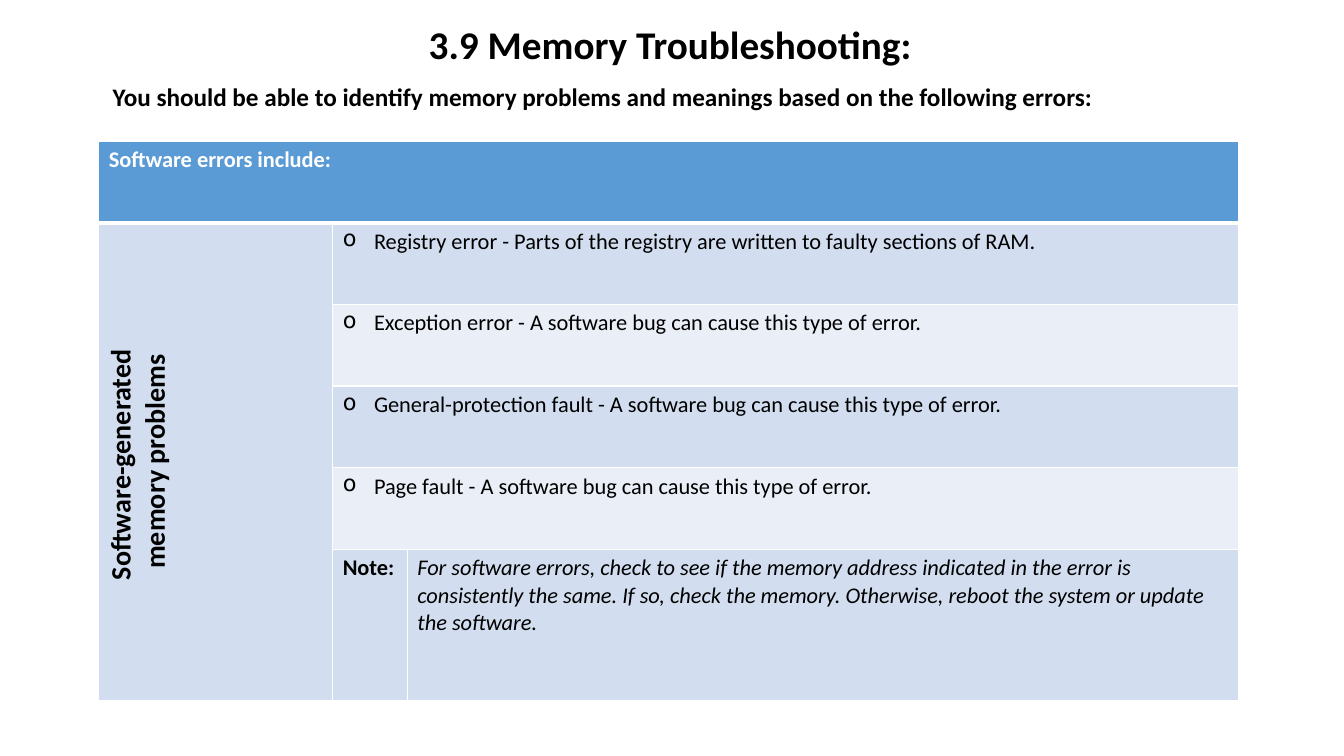
from lxml import etree
from pptx import Presentation
from pptx.dml.color import RGBColor
from pptx.enum.text import MSO_ANCHOR, PP_ALIGN
from pptx.oxml.ns import qn
from pptx.util import Inches, Pt

CENTER = PP_ALIGN.CENTER
MIDDLE = MSO_ANCHOR.MIDDLE

FONT = "Calibri"
BLACK, WHITE = "000000", "FFFFFF"
HEADER_FILL, DARK_BAND, LIGHT_BAND = "5B9BD5", "D2DEEF", "EAEFF7"

TITLE = "3.9 Memory Troubleshooting:"
INTRO = "You should be able to identify memory problems and meanings based on the following errors:"
HEADING = "Software errors include:"
CATEGORY = ["Software-generated ", "memory problems"]
ERRORS = [
    "Registry error - Parts of the registry are written to faulty sections of RAM.",
    "Exception error - A software bug can cause this type of error.",
    "General-protection fault - A software bug can cause this type of error.",
    "Page fault - A software bug can cause this type of error.",
]
NOTE_LABEL = "Note:"
NOTE = ("For software errors, check to see if the memory address indicated in the error is "
        "consistently the same. If so, check the memory. Otherwise, reboot the system or "
        "update the software.")

COLUMN_WIDTHS = [2.32, 0.74, 8.25]
ROW_HEIGHT, NOTE_HEIGHT = 0.81, 1.5
ROW_HEIGHTS = [ROW_HEIGHT] * (1 + len(ERRORS)) + [NOTE_HEIGHT]
NOTE_ROW = len(ROW_HEIGHTS) - 1
BULLET_INDENT = Inches(0.31)


def rgb(value):
    """Turn a hex string into a colour."""
    return RGBColor.from_string(value)


def write(frame, lines, size, color=BLACK, bold=False, italic=False, align=None, bullet=None):
    """Fill a text frame with equally styled paragraphs."""
    for index, line in enumerate(lines):
        paragraph = frame.paragraphs[0] if index == 0 else frame.add_paragraph()
        paragraph.text = line
        paragraph.alignment = align
        if bullet:
            properties = paragraph._p.get_or_add_pPr()
            properties.set("marL", str(BULLET_INDENT))
            properties.set("indent", str(-BULLET_INDENT))
            etree.SubElement(properties, qn("a:buChar")).set("char", bullet)
        font = paragraph.font
        font.name, font.size = FONT, Pt(size)
        font.bold, font.italic = bold, italic
        font.color.rgb = rgb(color)


def add_text(slide, box, line, size, wrap, align=None):
    """Add a bold text box."""
    frame = slide.shapes.add_textbox(*map(Inches, box)).text_frame
    frame.word_wrap = wrap
    write(frame, [line], size, bold=True, align=align)


def style_cell(cell, fill, top, bottom):
    """Set the fill and the white borders of a cell."""
    cell.fill.solid()
    cell.fill.fore_color.rgb = rgb(fill)
    properties = cell._tc.get_or_add_tcPr()
    borders = {"a:lnL": 1, "a:lnR": 1, "a:lnT": top, "a:lnB": bottom}
    for position, (tag, width) in enumerate(borders.items()):
        border = etree.Element(qn(tag), w=str(Pt(width)))
        solid = etree.SubElement(border, qn("a:solidFill"))
        etree.SubElement(solid, qn("a:srgbClr")).set("val", WHITE)
        properties.insert(position, border)


def add_error_table(slide):
    """Add the table of software errors."""
    table = slide.shapes.add_table(
        len(ROW_HEIGHTS), len(COLUMN_WIDTHS), Inches(0.98), Inches(1.4),
        Inches(sum(COLUMN_WIDTHS)), Inches(sum(ROW_HEIGHTS))).table
    for column, width in zip(table.columns, COLUMN_WIDTHS):
        column.width = Inches(width)
    for row, height in zip(table.rows, ROW_HEIGHTS):
        row.height = Inches(height)

    for row_index, row in enumerate(table.rows):
        for column_index, cell in enumerate(row.cells):
            if row_index == 0:
                fill = HEADER_FILL
            elif column_index == 0 or row_index % 2:
                fill = DARK_BAND
            else:
                fill = LIGHT_BAND
            style_cell(cell, fill, 3 if row_index == 1 else 1, 3 if row_index == 0 else 1)

    heading = table.cell(0, 0)
    heading.merge(table.cell(0, 2))
    write(heading.text_frame, [HEADING], 16, WHITE, bold=True)

    category = table.cell(1, 0)
    category.merge(table.cell(NOTE_ROW, 0))
    category.vertical_anchor = MIDDLE
    category._tc.get_or_add_tcPr().set("vert", "vert270")
    write(category.text_frame, CATEGORY, 20, bold=True, align=CENTER)

    for row_index, error in enumerate(ERRORS, 1):
        cell = table.cell(row_index, 1)
        cell.merge(table.cell(row_index, 2))
        write(cell.text_frame, [error], 16, bullet="o")

    write(table.cell(NOTE_ROW, 1).text_frame, [NOTE_LABEL], 16, bold=True)
    write(table.cell(NOTE_ROW, 2).text_frame, [NOTE], 16, italic=True)


def main():
    """Build the slide and save it."""
    presentation = Presentation()
    presentation.slide_width, presentation.slide_height = Inches(13.33), Inches(7.5)
    slide = presentation.slides.add_slide(presentation.slide_layouts[6])
    add_text(slide, (4.12, 0.15, 5.05, 0.57), TITLE, 28, False, CENTER)
    add_text(slide, (1.02, 0.76, 12.3, 0.4), INTRO, 18, True)
    add_error_table(slide)
    presentation.save("out.pptx")


if __name__ == "__main__":
    main()
